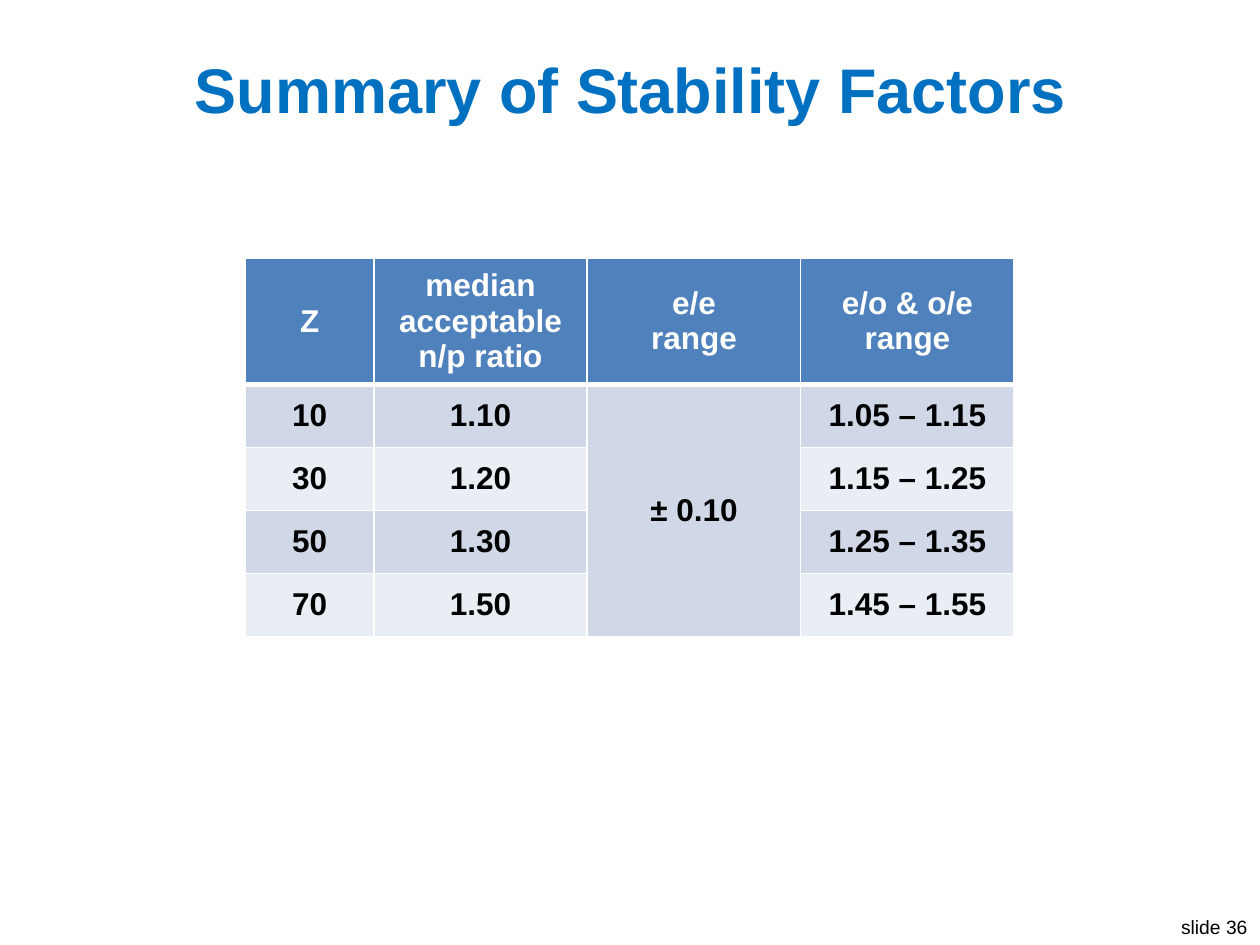
from lxml.etree import SubElement
from pptx import Presentation
from pptx.dml.color import RGBColor
from pptx.enum.text import MSO_ANCHOR as Anchor, PP_ALIGN as Align
from pptx.oxml.ns import qn
from pptx.util import Inches, Pt

WHITE, BLACK, TITLE_BLUE = "FFFFFF", "000000", "0070C0"
HEADER_BLUE, BANDS = "4F81BD", ("D0D8E8", "E9EDF4")
HEADINGS = ("Z", "median\nacceptable\nn/p ratio", "e/e\nrange", "e/o & o/e\nrange")
FACTORS = (
    ("10", "1.10", "± 0.10", "1.05 – 1.15"),
    ("30", "1.20", "", "1.15 – 1.25"),
    ("50", "1.30", "", "1.25 – 1.35"),
    ("70", "1.50", "", "1.45 – 1.55"),
)
COLUMN_SHARES = (3, 5, 5, 5)
ROW_SHARES = (2, 1, 1, 1, 1)
EE_COLUMN = 2


def color(hex_code):
    """Turn a hex string into a colour."""
    return RGBColor.from_string(hex_code)


def write(frame, text, size, hex_code, align, bold=False):
    """Fill a text frame and format all of its runs."""
    frame.text = text
    for paragraph in frame.paragraphs:
        paragraph.alignment = align
        for run in paragraph.runs:
            run.font.name = "Arial"
            run.font.size = Pt(size)
            run.font.bold = bold
            run.font.color.rgb = color(hex_code)


def add_label(slide, box, text, size, hex_code, align, bold=False, wrap=True):
    """Place one line of text, centred vertically in its box."""
    frame = slide.shapes.add_textbox(*map(Inches, box)).text_frame
    frame.word_wrap = wrap
    frame.vertical_anchor = Anchor.MIDDLE
    write(frame, text, size, hex_code, align, bold)


def add_borders(cell, bottom_width):
    """Draw white lines on the four sides of a cell."""
    properties = cell._tc.get_or_add_tcPr()
    for side, width in (("L", 1), ("R", 1), ("T", 1), ("B", bottom_width)):
        line = SubElement(properties, qn(f"a:ln{side}"), w=str(Pt(width)))
        SubElement(SubElement(line, qn("a:solidFill")), qn("a:srgbClr"), val=WHITE)


def style_cell(cell, text, fill, ink, bottom_width):
    """Give a cell its borders, fill and centred bold text."""
    add_borders(cell, bottom_width)
    cell.fill.solid()
    cell.fill.fore_color.rgb = color(fill)
    cell.vertical_anchor = Anchor.MIDDLE
    write(cell.text_frame, text, 18, ink, Align.CENTER, bold=True)


def add_factor_table(slide, box):
    """Place the stability table, with one e/e range for all rows."""
    left, top, width, height = map(Inches, box)
    rows = (HEADINGS, *FACTORS)
    table = slide.shapes.add_table(
        len(rows), len(HEADINGS), left, top, width, height).table
    for column, share in zip(table.columns, COLUMN_SHARES):
        column.width = int(width * share / sum(COLUMN_SHARES))
    for row, share in zip(table.rows, ROW_SHARES):
        row.height = int(height * share / sum(ROW_SHARES))
    for r, texts in enumerate(rows):
        for c, text in enumerate(texts):
            if r == 0:
                look = (HEADER_BLUE, WHITE, 3)
            else:
                look = (BANDS[(r - 1) % 2], BLACK, 1)
            style_cell(table.cell(r, c), text, *look)
    table.cell(1, EE_COLUMN).merge(table.cell(len(FACTORS), EE_COLUMN))


def main():
    """Build the slide and save it."""
    deck = Presentation()
    deck.slide_width, deck.slide_height = Inches(10), Inches(7.5)
    slide = deck.slides.add_slide(deck.slide_layouts[6])
    add_label(slide, (9.25, 7.21, 0.75, 0.29), "slide 36", 11, BLACK,
              Align.RIGHT, wrap=False)
    add_factor_table(slide, (1.95, 2.05, 6.1, 3))
    add_label(slide, (0.69, 0.3, 8.63, 0.8), "Summary of Stability Factors",
              36, TITLE_BLUE, Align.CENTER, bold=True)
    deck.save("out.pptx")


if __name__ == "__main__":
    main()
